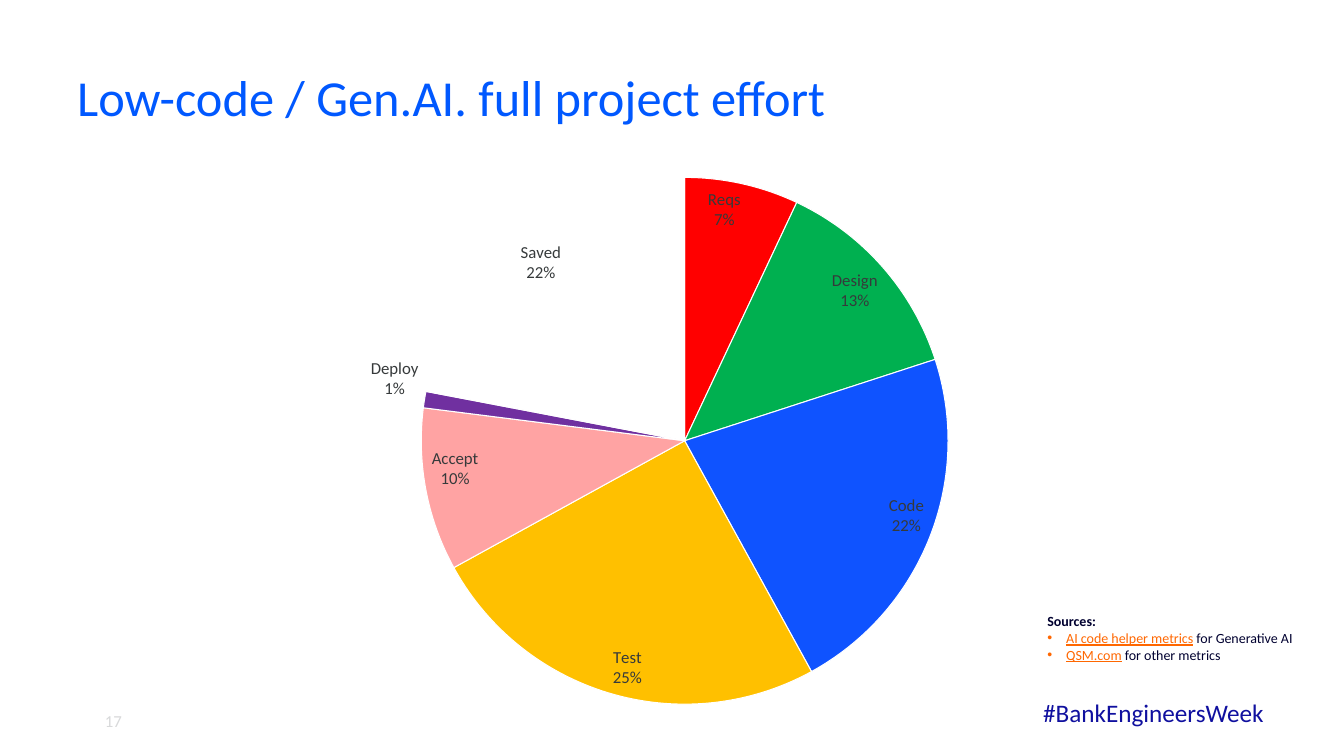
from lxml import etree
from pptx import Presentation
from pptx.chart.data import CategoryChartData
from pptx.dml.color import RGBColor
from pptx.enum import chart as ch, text as tx
from pptx.oxml import parse_xml
from pptx.oxml.ns import nsdecls, qn
from pptx.util import Pt

FONT = "Calibri"
HUES = {
    "title": "0058FF", "tag": "10109F", "ink": "000030", "link": "FF6700",
    "page": "D8D9DA", "label": "363A3B", "edge": "FFFFFF",
}
PARTS = [
    ("Reqs", 7, "FF0000"), ("Design", 13, "00B050"), ("Code", 22, "0F53FF"),
    ("Test", 25, "FFC000"), ("Accept", 10, "FFA3A3"),
    ("Deploy", 1, "7030A0"), ("Saved", 22, None),
]
LINKS = [
    ("AI code helper metrics", " for Generative AI"),
    ("QSM.com", " for other metrics"),
]


def rgb(name):
    return RGBColor.from_string(HUES.get(name, name))


def style(font, size, hue, bold=None, under=None):
    font.name, font.size = FONT, Pt(size)
    font.color.rgb = rgb(hue)
    font.bold, font.underline = bold, under


def write(para, words, size=10, hue="ink", bold=None, under=None):
    run = para.add_run()
    run.text = words
    style(run.font, size, hue, bold, under)


def frame(slide, box, inset=(7.2, 3.6), anchor=tx.MSO_ANCHOR.TOP):
    area = slide.shapes.add_textbox(*map(Pt, box)).text_frame
    area.word_wrap = True
    area.vertical_anchor = anchor
    area.margin_left = area.margin_right = Pt(inset[0])
    area.margin_top = area.margin_bottom = Pt(inset[1])
    return area


def title(slide, box):
    para = frame(slide, box, anchor=tx.MSO_ANCHOR.MIDDLE).paragraphs[0]
    para.line_spacing = 0.9
    write(para, "Low-code / Gen.AI. full project effort", size=36, hue="title")


def footer(slide, box):
    left, top, width, height = box
    page = frame(slide, (left, top + 5.7, 39, height), (0, 0),
                 tx.MSO_ANCHOR.MIDDLE).paragraphs[0]
    page.alignment = tx.PP_ALIGN.RIGHT
    write(page, "17", size=12, hue="page")
    tag = frame(slide, (left + width - 186.5, top, 186.5, height))
    write(tag.paragraphs[0], "#BankEngineersWeek", size=18, hue="tag")


def bullet(para):
    props = para._p.get_or_add_pPr()
    props.set("marL", str(Pt(13.5)))
    props.set("indent", str(-Pt(13.5)))
    hue = etree.SubElement(props, qn("a:buClr"))
    etree.SubElement(hue, qn("a:srgbClr")).set("val", HUES["link"])
    etree.SubElement(props, qn("a:buFont")).set("typeface", "Arial")
    etree.SubElement(props, qn("a:buChar")).set("char", "•")


def sources(slide, box):
    area = frame(slide, box)
    write(area.paragraphs[0], "Sources:", bold=True)
    for link, rest in LINKS:
        para = area.add_paragraph()
        bullet(para)
        write(para, link, hue="link", under=True)
        write(para, rest)


def split(label):
    for tag, val in (("showVal", 0), ("showCatName", 1), ("showPercent", 1)):
        label.find(qn("c:" + tag)).set("val", str(val))
    mark = etree.Element(qn("c:separator"))
    mark.text = "\n"
    label.find(qn("c:showBubbleSize")).addnext(mark)


def layout(plot, x, y, w, h):
    old = plot.find(qn("c:layout"))
    if old is not None:
        plot.remove(old)
    spots = "".join(f'<c:{tag} val="{val}"/>'
                    for tag, val in zip("xywh", (x, y, w, h)))
    plot.insert(0, parse_xml(
        f'<c:layout {nsdecls("c")}><c:manualLayout>'
        '<c:layoutTarget val="inner"/><c:xMode val="edge"/>'
        f'<c:yMode val="edge"/>{spots}</c:manualLayout></c:layout>'))


def pie(slide, box):
    data = CategoryChartData()
    data.categories = [name for name, _, _ in PARTS]
    data.add_series("Series 1", [val for _, val, _ in PARTS])
    chart = slide.shapes.add_chart(
        ch.XL_CHART_TYPE.PIE, *map(Pt, box), data).chart
    chart.has_legend = chart.has_title = False
    style(chart.font, 10, "label")
    plot = chart.plots[0]
    plot.vary_by_categories = True
    layout(plot._element.getparent(), 0.17, 0.09, 0.74, 0.88)

    series = plot.series[0]
    labels = series.data_labels
    style(labels.font, 12, "label")
    labels.number_format, labels.number_format_is_linked = "0%", False
    labels.position = ch.XL_LABEL_POSITION.INSIDE_END
    split(labels._element)

    for spot, (name, _, hue) in enumerate(PARTS):
        point = series.points[spot]
        point.format.line.color.rgb = rgb("edge")
        point.format.line.width = Pt(0.75)
        if hue:
            point.format.fill.solid()
            point.format.fill.fore_color.rgb = rgb(hue)
        else:
            point.format.fill.background()
        if name == "Deploy":
            label = point.data_label
            style(label.font, 12, "label")
            label.position = ch.XL_LABEL_POSITION.OUTSIDE_END
            split(labels._element.find(qn("c:dLbl")))


def main():
    deck = Presentation()
    deck.slide_width, deck.slide_height = Pt(960), Pt(540)
    slide = deck.slides.add_slide(deck.slide_layouts[6])
    footer(slide, (48, 494.7, 876.5, 29))
    sources(slide, (741, 434, 218, 44))
    title(slide, (48, 46, 862, 50.5))
    pie(slide, (214.5, 87, 508.5, 430))
    deck.save("out.pptx")


if __name__ == "__main__":
    main()
